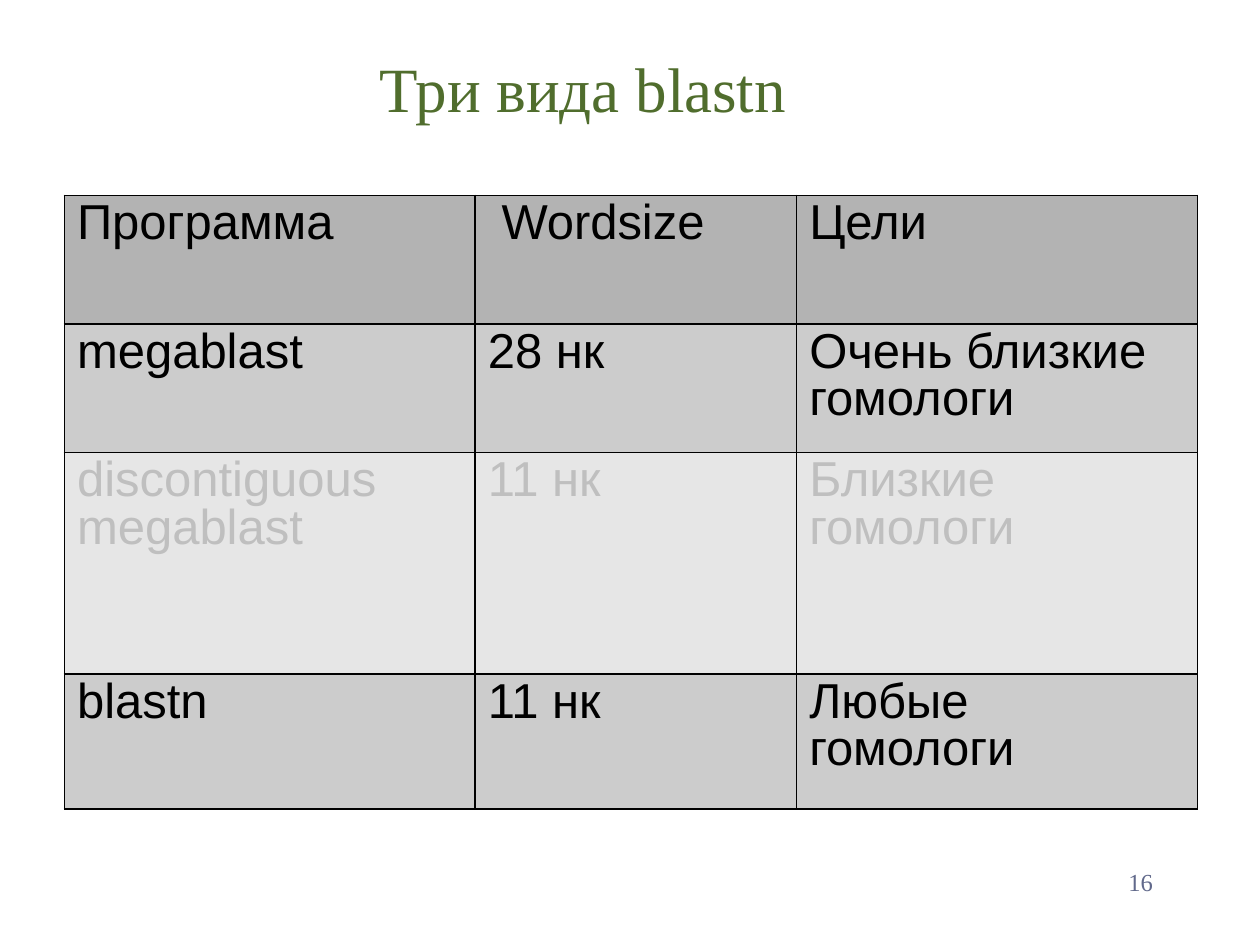
from dataclasses import dataclass

from lxml.etree import SubElement
from pptx import Presentation
from pptx.dml.color import RGBColor as RGB
from pptx.enum.text import MSO_ANCHOR as Anchor, PP_ALIGN as Align
from pptx.oxml.ns import qn
from pptx.util import Cm, Pt


@dataclass
class Theme:
    title_color: RGB = RGB(0x50, 0x6D, 0x2D)
    number_color: RGB = RGB(0x61, 0x69, 0x8B)
    text_color: RGB = RGB(0, 0, 0)
    muted_color: RGB = RGB(0xBF, 0xBF, 0xBF)
    header_fill: RGB = RGB(0xB3, 0xB3, 0xB3)
    row_fill: RGB = RGB(0xCC, 0xCC, 0xCC)
    muted_fill: RGB = RGB(0xE6, 0xE6, 0xE6)
    serif: str = "Times New Roman"
    sans: str = "Arial"
    title_size: Pt = Pt(36)
    table_size: Pt = Pt(28)
    number_size: Pt = Pt(14)


def style(paragraph, name, size, color):
    for run in paragraph.runs:
        run.font.name = name
        run.font.size = size
        run.font.color.rgb = color


def add_borders(cell, color, width):
    properties = cell._tc.get_or_add_tcPr()
    for side in ("a:lnL", "a:lnR", "a:lnT", "a:lnB"):
        line = SubElement(properties, qn(side), w=str(width))
        fill = SubElement(line, qn("a:solidFill"))
        SubElement(fill, qn("a:srgbClr"), val=str(color))


theme = Theme()
prs = Presentation()
prs.slide_width, prs.slide_height = Cm(25.4), Cm(19.05)
slide = prs.slides.add_slide(prs.slide_layouts[5])

title = slide.shapes.title
title.left, title.top, title.width, title.height = Cm(0.5), Cm(0.6), Cm(22.5), Cm(2.3)
title.text_frame.text = "Три вида blastn"
title.text_frame.vertical_anchor = Anchor.MIDDLE
heading = title.text_frame.paragraphs[0]
heading.alignment = Align.CENTER
style(heading, theme.serif, theme.title_size, theme.title_color)

# Each row: height in cm, fill, text colour, cell texts
programs = [
    (2.59, theme.header_fill, theme.text_color, ("Программа", "Wordsize", "Цели")),
    (2.59, theme.row_fill, theme.text_color,
     ("megablast", "28 нк", "Очень близкие гомологи")),
    (4.47, theme.muted_fill, theme.muted_color,
     ("discontiguous megablast", "11 нк", "Близкие гомологи")),
    (2.72, theme.row_fill, theme.text_color, ("blastn", "11 нк", "Любые гомологи")),
]
column_widths = (8.28, 6.48, 8.08)

table = slide.shapes.add_table(
    len(programs), len(column_widths), Cm(1.3), Cm(3.94),
    Cm(sum(column_widths)), Cm(sum(row[0] for row in programs))).table
for column, width in zip(table.columns, column_widths):
    column.width = Cm(width)

for row, (height, fill, color, texts) in zip(table.rows, programs):
    row.height = Cm(height)
    for cell, text in zip(row.cells, texts):
        add_borders(cell, theme.text_color, Pt(1))
        cell.fill.solid()
        cell.fill.fore_color.rgb = fill
        cell.text_frame.text = text
        entry = cell.text_frame.paragraphs[0]
        entry.line_spacing = 0.87
        style(entry, theme.sans, theme.table_size, color)
        for run in entry.runs:
            run.font.bold = False
table.cell(0, 1).margin_left = Cm(0.53)

page_number = slide.shapes.add_textbox(Cm(18.21), Cm(17.35), Cm(5.28), Cm(1.27))
page_number.text_frame.word_wrap = True
page_number.text_frame.text = "16"
number = page_number.text_frame.paragraphs[0]
number.alignment = Align.RIGHT
style(number, theme.serif, theme.number_size, theme.number_color)

prs.save("out.pptx")
